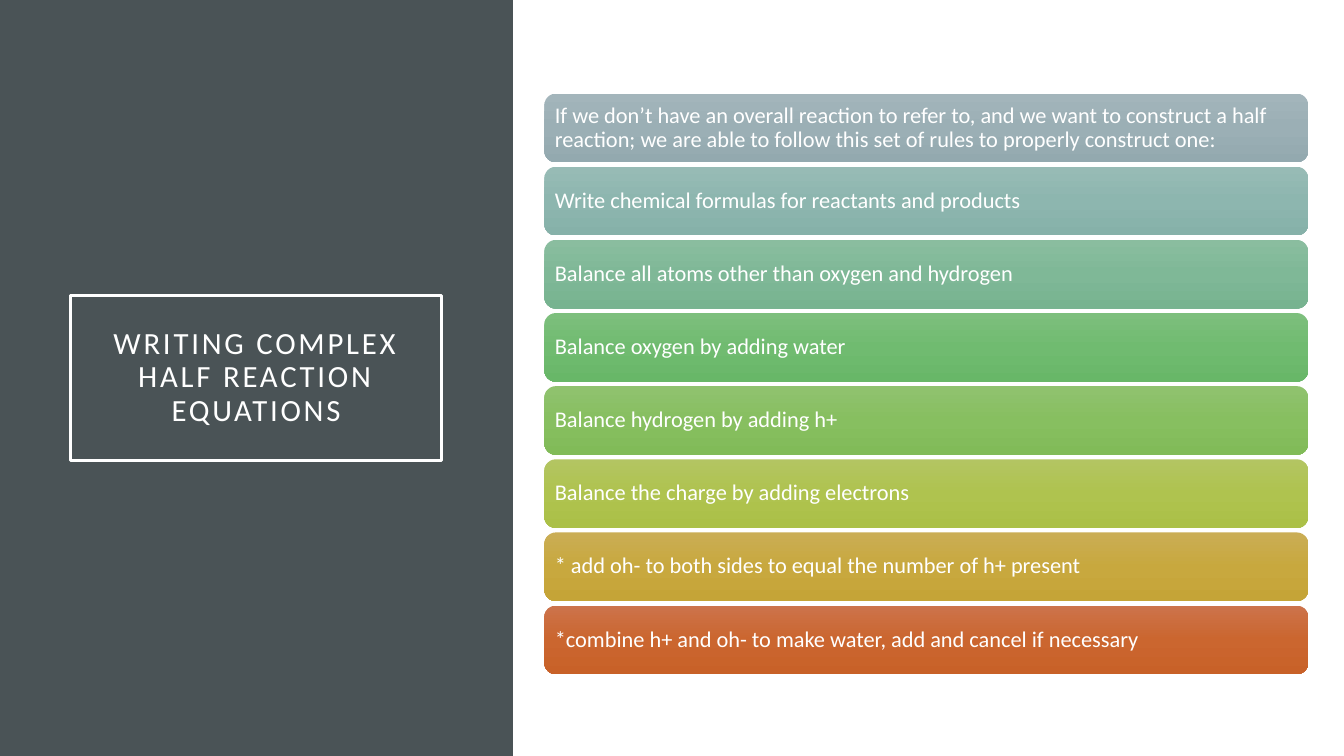
from copy import deepcopy
from dataclasses import dataclass

from pptx import Presentation
from pptx.dml.color import RGBColor
from pptx.enum.shapes import MSO_SHAPE as Preset
from pptx.enum.text import MSO_ANCHOR as Anchor, MSO_AUTO_SIZE as AutoSize, PP_ALIGN as Align
from pptx.oxml.ns import qn
from pptx.shapes.autoshape import Shape
from pptx.slide import Slide
from pptx.util import Cm, Pt

WHITE = RGBColor(0xFF, 0xFF, 0xFF)
SLATE = RGBColor(0x4A, 0x53, 0x56)
FONT = "Calibri"

BAR_LEFT, BAR_WIDTH, BAR_HEIGHT = 13.72, 19.25, 1.73
FIRST_TOP, LAST_TOP = 2.36, 15.26


@dataclass(frozen=True)
class Step:
    text: str
    top_color: RGBColor
    middle_color: RGBColor
    bottom_color: RGBColor


STEPS = [
    Step("If we don’t have an overall reaction to refer to, and we want to construct a half "
         "reaction; we are able to follow this set of rules to properly construct one:",
         RGBColor(0xA3, 0xB5, 0xBB), RGBColor(0x9B, 0xAF, 0xB5), RGBColor(0x93, 0xA9, 0xAF)),
    Step("Write chemical formulas for reactants and products",
         RGBColor(0x97, 0xBB, 0xB5), RGBColor(0x8D, 0xB6, 0xAF), RGBColor(0x86, 0xB1, 0xA9)),
    Step("Balance all atoms other than oxygen and hydrogen",
         RGBColor(0x8A, 0xBD, 0x9F), RGBColor(0x7F, 0xB8, 0x97), RGBColor(0x77, 0xB3, 0x90)),
    Step("Balance oxygen by adding water",
         RGBColor(0x7D, 0xBF, 0x7D), RGBColor(0x70, 0xBB, 0x70), RGBColor(0x68, 0xB7, 0x68)),
    Step("Balance hydrogen by adding h+",
         RGBColor(0x90, 0xC2, 0x6F), RGBColor(0x87, 0xBF, 0x60), RGBColor(0x81, 0xBB, 0x58)),
    Step("Balance the charge by adding electrons",
         RGBColor(0xB3, 0xC5, 0x62), RGBColor(0xAF, 0xC3, 0x4F), RGBColor(0xAB, 0xC0, 0x47)),
    Step("* add oh- to both sides to equal the number of h+ present",
         RGBColor(0xCA, 0xAD, 0x55), RGBColor(0xC8, 0xA8, 0x3E), RGBColor(0xC5, 0xA4, 0x37)),
    Step("*combine h+ and oh- to make water, add and cancel if necessary",
         RGBColor(0xCC, 0x73, 0x4B), RGBColor(0xCB, 0x66, 0x2F), RGBColor(0xC8, 0x61, 0x28)),
]


def apply_format(target: object, values: dict[str, object]) -> None:
    for name, value in values.items():
        setattr(target, name, value)


def write_text(box: Shape, text: str, size: float, align: Align, inset: float) -> None:
    frame = box.text_frame
    margins = {f"margin_{side}": Cm(inset) for side in ("left", "top", "right", "bottom")}
    apply_format(frame, {"word_wrap": True, "auto_size": AutoSize.NONE,
                         "vertical_anchor": Anchor.MIDDLE, **margins})
    para = frame.paragraphs[0]
    apply_format(para, {"alignment": align, "line_spacing": 0.9})
    span = para.add_run()
    span.text = text
    apply_format(span.font, {"name": FONT, "size": Pt(size)})
    span.font.color.rgb = WHITE


def add_panel(page: Slide) -> None:
    panel = page.shapes.add_shape(Preset.RECTANGLE, 0, 0, Cm(12.93), Cm(19.05))
    panel.shadow.inherit = False
    panel.fill.solid()
    panel.fill.fore_color.rgb = SLATE
    panel.line.fill.background()


def place_title(page: Slide, text: str) -> None:
    title = page.shapes.title
    apply_format(title, {"left": Cm(1.78), "top": Cm(7.44), "width": Cm(9.35), "height": Cm(4.17)})
    title.line.color.rgb = WHITE
    title.line.width = Pt(2.5)
    write_text(title, text, 22, Align.CENTER, 0.51)
    title.text_frame.paragraphs[0].runs[0].font._element.set("spc", "200")
    page.shapes._spTree.append(title._element)


def fill_gradient(box: Shape, colors: list[RGBColor]) -> None:
    box.fill.gradient()
    box.fill.gradient_angle = 270
    stop_list = box._element.spPr.find(".//" + qn("a:gsLst"))
    stop_list.append(deepcopy(stop_list[0]))
    for index, (stop, color) in enumerate(zip(box.fill.gradient_stops, colors)):
        stop.position = index / (len(colors) - 1)
        stop.color.rgb = color


def add_step(page: Slide, step: Step, top: float) -> None:
    bar = page.shapes.add_shape(Preset.ROUNDED_RECTANGLE, Cm(BAR_LEFT), Cm(top),
                                Cm(BAR_WIDTH), Cm(BAR_HEIGHT))
    bar.shadow.inherit = False
    bar.line.fill.background()
    fill_gradient(bar, [step.top_color, step.middle_color, step.bottom_color])
    write_text(bar, step.text, 16, Align.LEFT, 0.18)


def main() -> None:
    deck = Presentation()
    deck.slide_width, deck.slide_height = Cm(33.87), Cm(19.05)
    page = deck.slides.add_slide(deck.slide_layouts.get_by_name("Title Only"))
    add_panel(page)
    place_title(page, "WRITING COMPLEX HALF REACTION EQUATIONS")
    pitch = (LAST_TOP - FIRST_TOP) / (len(STEPS) - 1)
    for index, step in enumerate(STEPS):
        add_step(page, step, FIRST_TOP + index * pitch)
    deck.save("out.pptx")


if __name__ == "__main__":
    main()
